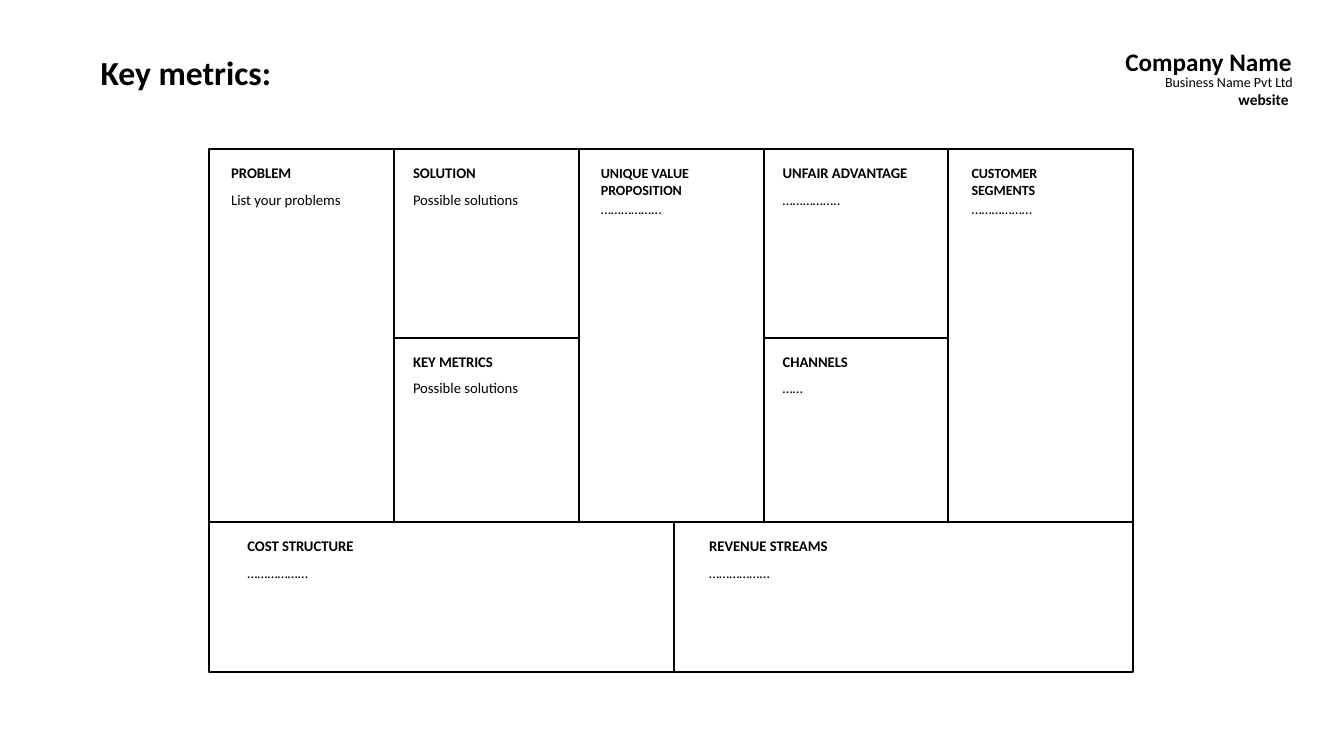
from pptx import Presentation
from pptx.dml.color import RGBColor
from pptx.enum.shapes import MSO_SHAPE
from pptx.enum.text import MSO_AUTO_SIZE, PP_ALIGN
from pptx.util import Inches, Pt

BLACK = RGBColor(0, 0, 0)
WHITE = RGBColor(255, 255, 255)
RECT = MSO_SHAPE.RECTANGLE
GROW = MSO_AUTO_SIZE.SHAPE_TO_FIT_TEXT
LEFT, RIGHT = PP_ALIGN.LEFT, PP_ALIGN.RIGHT
FONT = "Calibri"

prs = Presentation()
prs.slide_width, prs.slide_height = Inches(13.33), Inches(7.5)
s = prs.slides.add_slide(prs.slide_layouts[6])


def add_text(text, x, y, w, h, size, bold=False, align=LEFT, wrap=True):
    tf = s.shapes.add_textbox(Inches(x), Inches(y), Inches(w), Inches(h)).text_frame
    tf.word_wrap = wrap
    tf.auto_size = GROW
    p = tf.paragraphs[0]
    p.text = text
    p.alignment = align
    f = p.runs[0].font
    f.name, f.size, f.bold = FONT, Pt(size), bold
    f.color.rgb = BLACK


add_text("Company Name", 11.05, 0.41, 1.86, 0.4, 18, True, RIGHT, False)
add_text("Business Name Pvt Ltd", 11.43, 0.68, 1.49, 0.27, 10, False, RIGHT, False)
add_text("website", 12.17, 0.84, 0.71, 0.29, 11, True, RIGHT, False)
add_text("Key metrics:", 0.9, 0.47, 1.91, 0.5, 24, True, LEFT, False)

X0, COL = 2.075, 1.833
TOP, MID, LOW, END = 1.48, 3.35, 5.18, 6.67
SPLIT = 6.685
cols = [X0 + i * COL for i in range(6)]

cells = [
    (cols[0], cols[1], TOP, LOW, 0.12, "PROBLEM", "List your problems"),
    (cols[1], cols[2], TOP, MID, 0.09, "SOLUTION", "Possible solutions"),
    (cols[1], cols[2], MID, LOW, 0.09, "KEY METRICS", "Possible solutions"),
    (cols[2], cols[3], TOP, LOW, 0.12, "UNIQUE VALUE PROPOSITION", "………………"),
    (cols[3], cols[4], TOP, MID, 0.09, "UNFAIR ADVANTAGE", "…………….."),
    (cols[3], cols[4], MID, LOW, 0.09, "CHANNELS", "……"),
    (cols[4], cols[5], TOP, LOW, 0.13, "CUSTOMER SEGMENTS", "………………"),
    (cols[0], SPLIT, LOW, END, 0.28, "COST STRUCTURE", "………………"),
    (SPLIT, cols[5], LOW, END, 0.25, "REVENUE STREAMS", "………………"),
]

for x1, x2, y1, y2, inset, title, body in cells:
    sp = s.shapes.add_shape(RECT, Inches(x1), Inches(y1), Inches(x2 - x1), Inches(y2 - y1))
    sp.shadow.inherit = False
    sp.fill.solid()
    sp.fill.fore_color.rgb = WHITE
    sp.line.color.rgb = BLACK
    sp.line.width = Pt(1.5)

    two_lines = title in ("UNIQUE VALUE PROPOSITION", "CUSTOMER SEGMENTS")
    size, title_h, step = (10, 0.44, 0.35) if two_lines else (10.5, 0.29, 0.26)
    w = 3.71 if y1 == LOW else 1.49
    add_text(title, x1 + inset, y1 + 0.1, w, title_h, size, True)
    add_text(body, x1 + inset, y1 + 0.1 + step, w, 0.29, 10.5)

prs.save("out.pptx")
